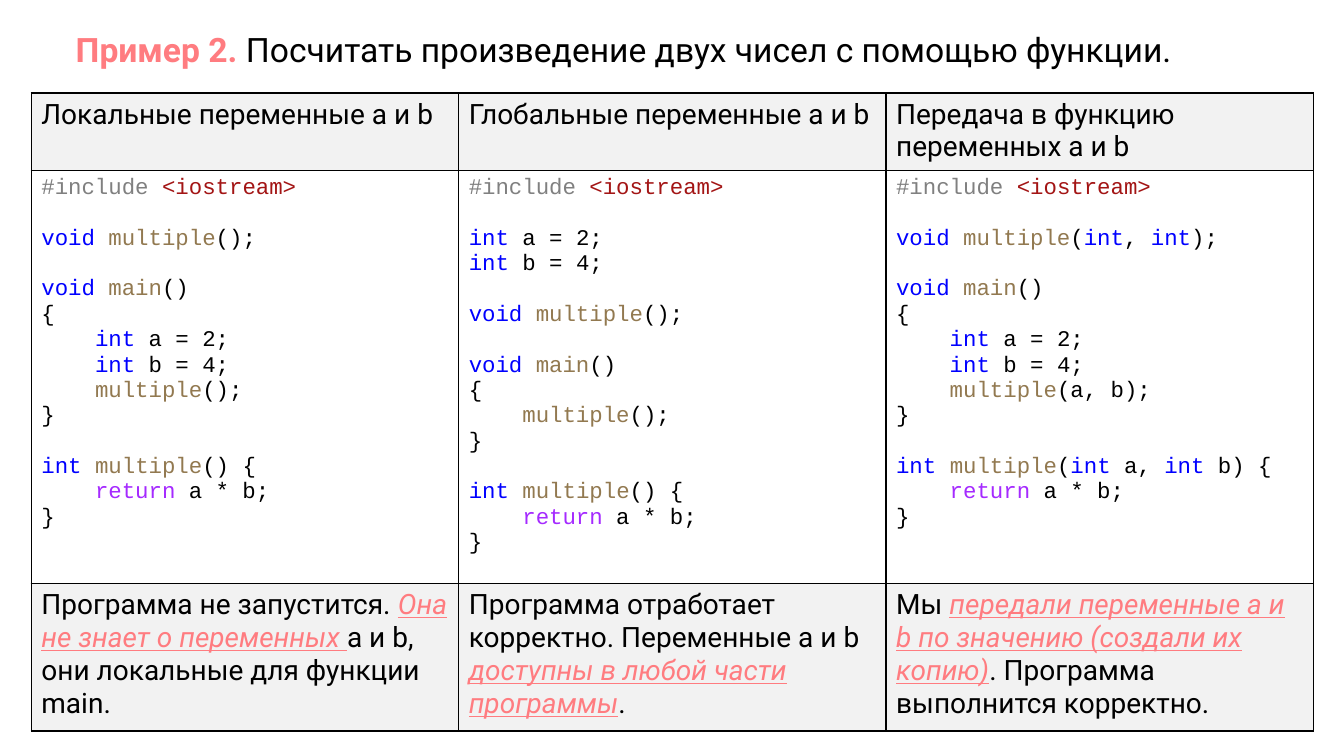
import itertools

import pptx
import pptx.dml.color
import pptx.enum.text
import pptx.oxml
import pptx.oxml.ns
import pptx.util

ACCENT, INK, PANEL = "FF7C80", "000000", "F2F2F2"
KEYWORD, NAME = "0000FF", "927950"
SYNTAX = {"#include": "808080", "<iostream>": "A31515", "void": KEYWORD,
          "int": KEYWORD, "multiple": NAME, "main": NAME, "return": "A52AFF"}
CODE_SIZE, CODE_LINE = 16, 18.1

# Content: accented passages stand between bars
TITLE = "|Пример 2. |Посчитать произведение двух чисел с помощью функции."
HEADINGS = ["Локальные переменные a и b", "Глобальные переменные a и b",
            "Передача в функцию переменных a и b"]
PROGRAMS = ["""#include <iostream>

void multiple();

void main()
{
    int a = 2;
    int b = 4;
    multiple();
}

int multiple() {
    return a * b;
}""", """#include <iostream>

int a = 2;
int b = 4;

void multiple();

void main()
{
    multiple();
}

int multiple() {
    return a * b;
}""", """#include <iostream>

void multiple(int, int);

void main()
{
    int a = 2;
    int b = 4;
    multiple(a, b);
}

int multiple(int a, int b) {
    return a * b;
}"""]
VERDICTS = [
    "Программа не запустится. |Она не знает о переменных |a и b, "
    "они локальные для функции main.",
    "Программа отработает корректно. Переменные a и b "
    "|доступны в любой части программы|.",
    "Мы |передали переменные a и b по значению (создали их копию)|. "
    "Программа выполнится корректно."]

# Layout as shares of the slide
LEFT, COLUMN = 0.0233, 0.318
TOP, HEADING_ROW, CODE_ROW, VERDICT_ROW = 0.123, 0.103, 0.546, 0.195


def rgb(hex_colour):
    return pptx.dml.color.RGBColor.from_string(hex_colour)


class Board:
    """Holds the style and the current slide."""
    font = "Roboto"
    code_font = "Courier New"

    def __init__(self, deck):
        self.width, self.height = deck.slide_width, deck.slide_height
        self.slide = deck.slides.add_slide(deck.slide_layouts[6])

    def x(self, share):
        return round(self.width * share)

    def y(self, share):
        return round(self.height * share)

    def run(self, paragraph, text, colour, **style):
        run = paragraph.add_run()
        run.text = text
        run.font.color.rgb = rgb(colour)
        for key, value in style.items():
            setattr(run.font, key, value)

    def prose(self, frame, text, size, **accent_style):
        style = {"name": self.font, "size": pptx.util.Pt(size)}
        for index, part in enumerate(text.split("|")):
            accented = index % 2 == 1
            if part:
                self.run(frame.paragraphs[0], part, ACCENT if accented else INK,
                         **style, **(accent_style if accented else {}))

    def code(self, frame, program):
        style = {"name": self.code_font, "size": pptx.util.Pt(CODE_SIZE)}
        paragraph, gap = frame.paragraphs[0], False
        for number, line in enumerate(program.split("\n")):
            if not line:
                gap = True
                continue
            if number:
                paragraph = frame.add_paragraph()
            if gap:
                paragraph.space_before = pptx.util.Pt(CODE_LINE)
            gap = False
            for _, token in itertools.groupby(line, lambda c: c.isalnum() or c in "#<>"):
                token = "".join(token)
                self.run(paragraph, token, SYNTAX.get(token, INK), **style)

    def title(self, text):
        box = self.slide.shapes.add_textbox(
            self.x(0.012), self.y(0.032), self.x(0.976), self.y(0.067))
        frame = box.text_frame
        frame.word_wrap = True
        heading = frame.paragraphs[0]
        heading.alignment = pptx.enum.text.PP_ALIGN.JUSTIFY
        heading._p.get_or_add_pPr().set("indent", str(self.x(0.037)))
        self.prose(frame, text, 24, bold=True)

    def table(self, column, top, row_heights, columns=1):
        frame = self.slide.shapes.add_table(
            len(row_heights), columns, self.x(LEFT + column * COLUMN), self.y(top),
            self.x(COLUMN * columns), self.y(sum(row_heights)))
        table = frame.table
        table.first_row = table.horz_banding = False
        for row, height in zip(table.rows, row_heights):
            row.height = self.y(height)
        for table_column in table.columns:
            table_column.width = self.x(COLUMN)
        return table

    def cell(self, cell, fill=None):
        if fill:
            cell.fill.solid()
            cell.fill.fore_color.rgb = rgb(fill)
        else:
            cell.fill.background()
        # Borders come before the fill in the cell properties
        for index, side in enumerate("LRTB"):
            cell._tc.get_or_add_tcPr().insert(index, pptx.oxml.parse_xml(
                f'<a:ln{side} {pptx.oxml.ns.nsdecls("a")} w="12700">'
                f'<a:solidFill><a:srgbClr val="{INK}"/></a:solidFill></a:ln{side}>'))
        return cell.text_frame


def main():
    deck = pptx.Presentation()
    deck.slide_width = pptx.util.Inches(13.33)
    deck.slide_height = pptx.util.Inches(7.5)
    board = Board(deck)
    board.title(TITLE)

    # Headings and programs
    comparison = board.table(0, TOP, [HEADING_ROW, CODE_ROW], columns=3)
    for column, (heading, program) in enumerate(zip(HEADINGS, PROGRAMS)):
        board.prose(board.cell(comparison.cell(0, column), PANEL), heading, 20)
        board.code(board.cell(comparison.cell(1, column)), program)

    # Verdict under each program
    for column, verdict in enumerate(VERDICTS):
        panel = board.table(column, TOP + HEADING_ROW + CODE_ROW, [VERDICT_ROW])
        board.prose(board.cell(panel.cell(0, 0), PANEL), verdict, 20,
                    italic=True, underline=True)

    deck.save("out.pptx")


if __name__ == "__main__":
    main()
